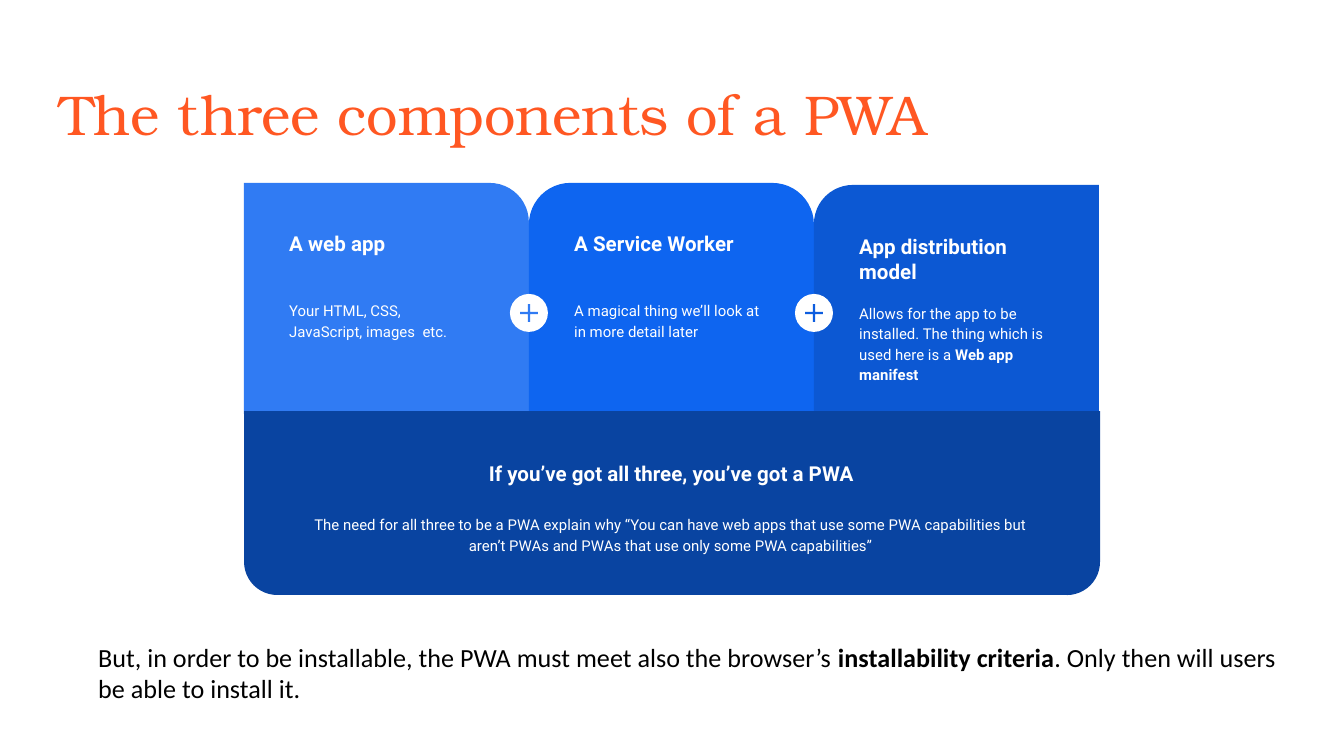
from pptx import Presentation
from pptx import util as u
from pptx.dml.color import RGBColor
from pptx.enum import shapes, text

PX = 914400 / 134.4
COLORS = {
    "title": "FF5722", "white": "FFFFFF", "black": "000000",
    "web_app": "307BF3", "worker": "0E65F0", "distribution": "0C58D3",
    "plus": "0D5DDF", "band": "0944A1",
}
S = shapes.MSO_SHAPE

# Text is a list of (words, bold) runs.
TITLE = [("The three components of a PWA", False)]
CARDS = [
    {"color": "web_app", "shape": S.ROUND_1_RECTANGLE, "adj": [0.17], "top": 183,
     "head": [("A web app", True)],
     "body": [("Your HTML, CSS, JavaScript, images  etc.", False)]},
    {"color": "worker", "shape": S.ROUND_2_SAME_RECTANGLE, "adj": [0.18, 0], "top": 183,
     "head": [("A Service Worker", True)],
     "body": [("A magical thing we’ll look at in more detail later", False)]},
    {"color": "distribution", "shape": S.ROUND_1_RECTANGLE, "adj": [0.17], "top": 185,
     "flip": True,
     "head": [("App distribution model", True)],
     "body": [("Allows for the app to be installed. The thing which is used here is a ", False),
              ("Web app manifest", True)]},
]
PLUS_COLORS = ["web_app", "plus"]
BAND_HEAD = [("If you’ve got all three, you’ve got a PWA", True)]
BAND_BODY = [("The need for all three to be a PWA explain why “You can have web apps that use "
              "some PWA capabilities but aren’t PWAs and PWAs that use only some PWA "
              "capabilities”", False)]
NOTE = [("But, in order to be installable, the PWA must meet also the browser’s ", False),
        ("installability criteria", True),
        (". Only then will users be able to install it.", False)]

CARD_LEFT, CARD_W, CARD_BOTTOM = 244, 285, 414
BAND_TOP, BAND_W, BAND_H = 411, 856, 184
PLUS_Y, CIRCLE, PLUS = 313, 38, 24


def px(n):
    return u.Emu(round(n * PX))


def rgb(name):
    return RGBColor.from_string(COLORS[name])


def add_shape(slide, kind, box, color, adj=()):
    sp = slide.shapes.add_shape(kind, *map(px, box))
    sp.shadow.inherit = False
    sp.fill.solid()
    sp.fill.fore_color.rgb = rgb(color)
    sp.line.fill.background()
    for i, value in enumerate(adj):
        sp.adjustments[i] = value
    return sp


def add_text(slide, box, runs, size, font="Roboto", color="white", center=False):
    tf = slide.shapes.add_textbox(*map(px, box)).text_frame
    tf.word_wrap = True
    tf.margin_left = tf.margin_right = tf.margin_top = tf.margin_bottom = u.Inches(0.1)
    p = tf.paragraphs[0]
    p.alignment = text.PP_ALIGN.CENTER if center else text.PP_ALIGN.LEFT
    p.font.size, p.font.name = u.Pt(size), font
    p.font.color.rgb = rgb(color)
    for words, bold in runs:
        r = p.add_run()
        r.text, r.font.bold = words, bold
    return p


def add_body(slide, box, runs, center=False):
    p = add_text(slide, box, runs, 8, center=center)
    p.line_spacing, p.space_after = 1.15, u.Pt(16)


def add_card(slide, index, card):
    left, top = CARD_LEFT + index * CARD_W, card["top"]
    sp = add_shape(slide, card["shape"], (left, top, CARD_W, CARD_BOTTOM - top),
                   card["color"], card["adj"])
    if card.get("flip"):
        sp._element.spPr.get_or_add_xfrm().set("flipH", "1")
    add_text(slide, (left + 32, top + 36, 214, 67), card["head"], 11)
    add_body(slide, (left + 32, top + 103, 214, 75), card["body"])


def add_plus(slide, x, color):
    """Put a plus in a white circle on the seam at x."""
    for kind, size, fill, adj in ((S.OVAL, CIRCLE, "white", []),
                                  (S.MATH_PLUS, PLUS, color, [0.1])):
        add_shape(slide, kind, (x - size / 2, PLUS_Y - size / 2, size, size), fill, adj)


def main():
    prs = Presentation()
    prs.slide_width, prs.slide_height = px(1344), px(756)
    slide = prs.slides.add_slide(prs.slide_layouts[6])

    add_text(slide, (46, 66, 1253, 85), TITLE, 30, "TeX Gyre Bonum", "title")
    for i, card in enumerate(CARDS):
        add_card(slide, i, card)
    for i, color in enumerate(PLUS_COLORS, 1):
        add_plus(slide, CARD_LEFT + i * CARD_W, color)

    band = add_shape(slide, S.ROUND_2_SAME_RECTANGLE,
                     (CARD_LEFT, BAND_TOP, BAND_W, BAND_H), "band", [0.18, 0])
    band.rotation = 180
    add_text(slide, (379, 449, 585, 51), BAND_HEAD, 11, center=True)
    add_body(slide, (288, 500, 766, 58), BAND_BODY, center=True)
    add_text(slide, (85, 628, 1214, 109), NOTE, 14, "Calibri", "black")
    prs.save("out.pptx")


if __name__ == "__main__":
    main()
